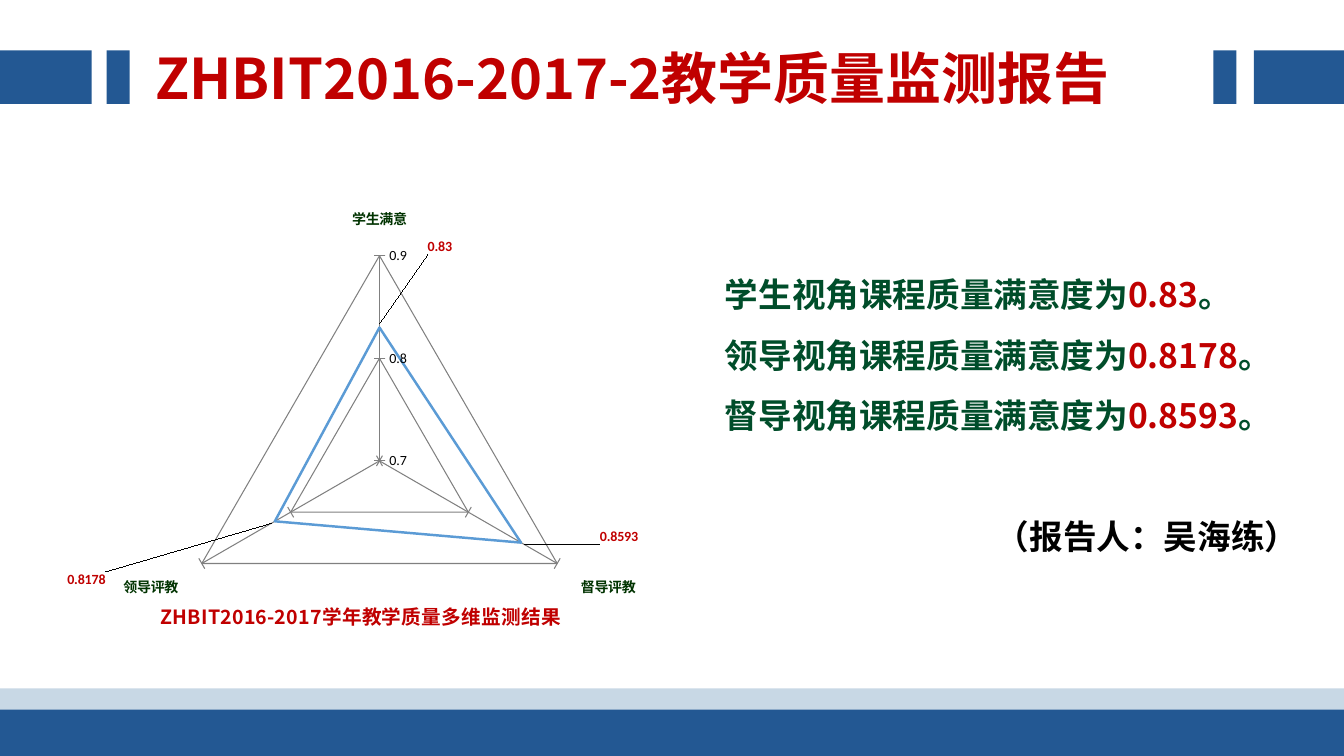
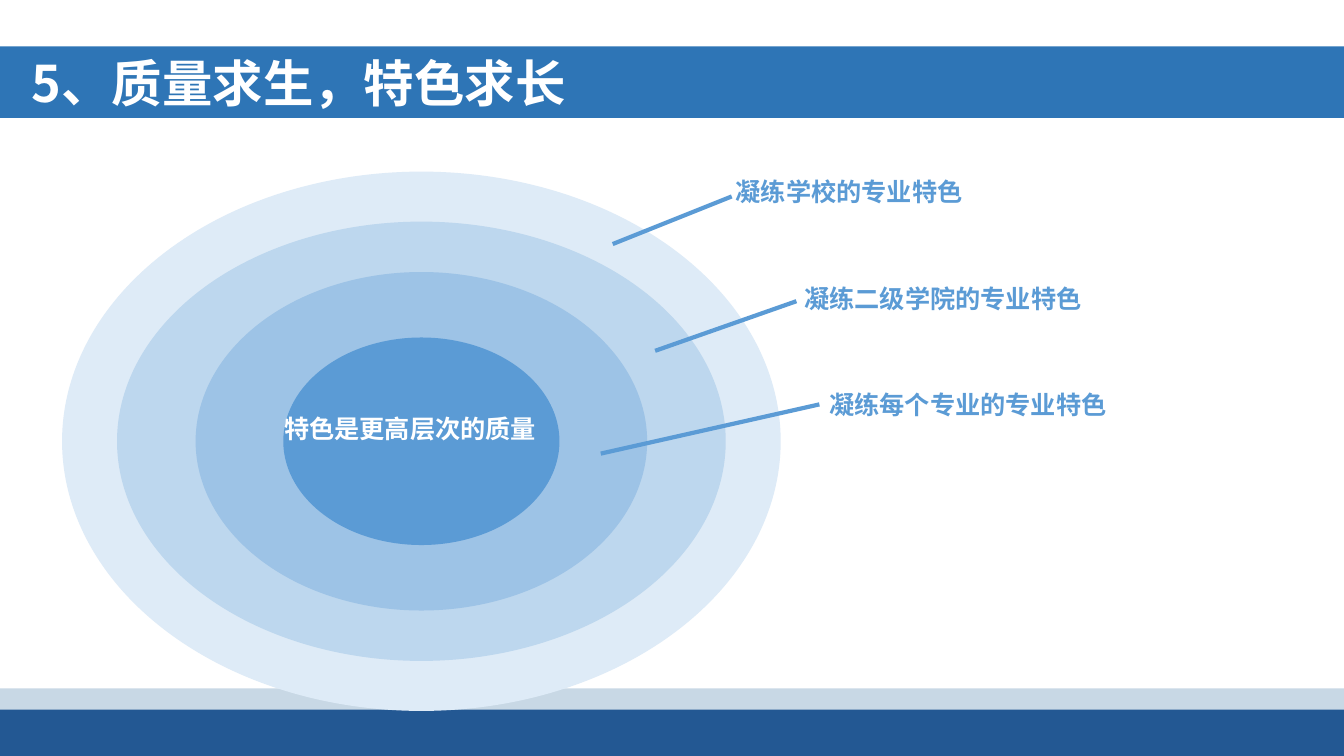
"""Build two slides on teaching quality with a radar chart and nested rings."""
from pptx import Presentation
from pptx.chart.data import CategoryChartData as Data
from pptx.dml.color import RGBColor
from pptx.enum.chart import XL_CHART_TYPE as Kind
from pptx.enum.shapes import MSO_CONNECTOR as Link, MSO_SHAPE as Form
from pptx.enum.text import MSO_ANCHOR as Anchor, MSO_AUTO_SIZE as Auto, PP_ALIGN as Align
from pptx.oxml import parse_xml
from pptx.oxml.ns import nsdecls, qn
from pptx.oxml.xmlchemy import OxmlElement as Node
from pptx.util import Cm, Pt

RED, GREEN, DARK, BLACK, WHITE = "C00000", "004D2A", "003300", "000000", "FFFFFF"
NAVY, PALE, BLUE, BAND, GREY = "235893", "C8D8E5", "5B9BD5", "2E75B6", "808080"
CJK = "Noto Sans CJK SC"


def paint(item, hue):
    """Give a font, fill or line a solid colour."""
    if hasattr(item, "solid"):
        item.solid()
        item.fore_color.rgb = RGBColor.from_string(hue)
    else:
        item.color.rgb = RGBColor.from_string(hue)


def style(font, size, hue, bold=True, name=CJK):
    """Set the size, weight, face and colour of a font."""
    for key, val in {"size": Pt(size), "bold": bold, "name": name}.items():
        setattr(font, key, val)
    paint(font, hue)
    east = Node("a:ea")
    east.set("typeface", name)
    font._element.find(qn("a:latin")).addnext(east)


deck = Presentation()
deck.slide_width, deck.slide_height = Cm(33.87), Cm(19.05)
report = deck.slides.add_slide(deck.slide_layouts[1])
traits = deck.slides.add_slide(deck.slide_layouts[5])

bars = [
    (0, 17.35, 33.87, 1.4, PALE),
    (0, 17.88, 33.87, 1.17, NAVY),
    (0, 1.27, 2.31, 1.35, NAVY),
    (2.69, 1.27, 0.58, 1.35, NAVY),
    (30.58, 1.27, 0.58, 1.35, NAVY),
    (31.6, 1.27, 2.27, 1.35, NAVY),
]
tree = deck.slide_master.shapes._spTree
for i, (*box, hue) in enumerate(bars):
    bar = report.shapes.add_shape(Form.RECTANGLE, *map(Cm, box))
    bar.shadow.inherit = False
    paint(bar.fill, hue)
    bar.line.fill.background()
    bar._element.nvSpPr.cNvPr.id = 20 + i
    tree.insert(2 + i, bar._element)

heads = [
    (report, "ZHBIT2016-2017-2教学质量监测报告", (3.66, 0.97, 29.29, 1.96), 0.25, 40, RED),
    (traits, "5、质量求生，特色求长", (0, 1.17, 33.87, 1.8), 0.8, 36, WHITE),
]
for page, text, box, inset, size, hue in heads:
    head = page.shapes.title
    head.left, head.top, head.width, head.height = map(Cm, box)
    frame = head.text_frame
    frame.text = text
    look = {"margin_left": Cm(inset), "auto_size": Auto.NONE, "vertical_anchor": Anchor.MIDDLE}
    for key, val in look.items():
        setattr(frame, key, val)
    frame.paragraphs[0].alignment = Align.LEFT
    style(frame.paragraphs[0].runs[0].font, size, hue)
paint(traits.shapes.title.fill, BAND)

body = report.placeholders[1]
body.left, body.top, body.width, body.height = map(Cm, (17.27, 6.27, 15.7, 7.9))
frame = body.text_frame
frame.auto_size, frame.margin_left = Auto.NONE, Cm(1)
rows = [
    [(f"{who}视角课程质量满意度为", GREEN), (score, RED), ("。", GREEN)]
    for who, score in (("学生", "0.83"), ("领导", "0.8178"), ("督导", "0.8593"))
]
rows.append([("（报告人：吴海练）", BLACK)])
for i, row in enumerate(rows):
    para = frame.add_paragraph() if i else frame.paragraphs[0]
    last = i == len(rows) - 1
    props = para._p.get_or_add_pPr()
    props.set("marL", "0")
    props.set("indent", "0")
    props.append(Node("a:buNone"))
    look = {
        "line_spacing": Pt(43.2),
        "space_before": Pt(43.2 if last else 0),
        "alignment": Align.RIGHT if last else Align.LEFT,
    }
    for key, val in look.items():
        setattr(para, key, val)
    for text, hue in row:
        run = para.add_run()
        run.text = text
        style(run.font, 24, hue)

data = Data()
data.categories = ["学生满意", "督导评教", "领导评教"]
data.add_series("Series 1", (0.83, 0.8593, 0.8178))
place = map(Cm, (-0.03, 3.45, 19, 13.61))
chart = report.shapes.add_chart(Kind.RADAR, *place, data).chart
chart.has_legend = False
style(chart.font, 10, BLACK, False, "Calibri")
chart.has_title = True
title = chart.chart_title
title.text_frame.text = "ZHBIT2016-2017学年教学质量多维监测结果"
style(title.text_frame.paragraphs[0].runs[0].font, 14, RED)

spokes, scale = chart.category_axis, chart.value_axis
style(spokes.tick_labels.font, 10, DARK)
style(scale.tick_labels.font, 10, BLACK, False, "Calibri")
look = {"minimum_scale": 0.7, "maximum_scale": 0.9, "major_unit": 0.1}
for key, val in look.items():
    setattr(scale, key, val)
scale.tick_labels.number_format = "0.0"
scale.tick_labels.number_format_is_linked = False
for axis in (spokes, scale):
    for part in (axis, axis.major_gridlines):
        paint(part.format.line, GREY)
        part.format.line.width = Pt(0.75)

ring = chart.plots[0].series[0]
ring.smooth = False
paint(ring.format.line, BLUE)
ring.format.line.width = Pt(1.75)

spots = [
    (title._element, {"xMode": "edge", "yMode": "edge", "x": 0.21, "y": 0.85}),
    (chart._chartSpace.chart.plotArea, {
        "layoutTarget": "inner", "xMode": "edge", "yMode": "edge",
        "x": 0.23, "y": 0.22, "w": 0.55, "h": 0.76}),
]
for i, (x, y) in enumerate([(0.08, -0.12), (0.1, -0.03), (-0.22, 0.09)]):
    label = ring.points[i].data_label
    style(label.font, 10, RED, True, "Calibri")
    spots.append((ring._element.findall(".//" + qn("c:dLbl"))[i], {"x": x, "y": y}))
for owner, vals in spots:
    old = owner.find(qn("c:layout"))
    if old is not None:
        owner.remove(old)
    inner = "".join(f'<c:{key} val="{val}"/>' for key, val in vals.items())
    spot = parse_xml(
        f'<c:layout {nsdecls("c")}><c:manualLayout>{inner}</c:manualLayout></c:layout>')
    lead = [kid for kid in owner if kid.tag in (qn("c:idx"), qn("c:tx"))]
    owner.insert(len(lead), spot)

mid_x, mid_y = 10.62, 11.12
rings = [
    (18.11, 13.59, "DEEBF7"),
    (15.34, 11.07, "BDD7EE"),
    (11.38, 8.53, "9DC3E6"),
    (6.96, 5.23, BLUE),
]
for wide, high, hue in rings:
    box = (mid_x - wide / 2, mid_y - high / 2, wide, high)
    oval = traits.shapes.add_shape(Form.OVAL, *map(Cm, box))
    oval.shadow.inherit = False
    paint(oval.fill, hue)
    oval.line.fill.background()

notes = [
    ("特色是更高层次的质量", 6.91, 10.29, WHITE),
    ("凝练学校的专业特色", 18.29, 4.32, BLUE),
    ("凝练二级学院的专业特色", 20.02, 7.01, BLUE),
    ("凝练每个专业的专业特色", 20.65, 9.68, BLUE),
]
for text, left, top, hue in notes:
    frame = traits.shapes.add_textbox(*map(Cm, (left, top, 8, 1.02))).text_frame
    frame.text = text
    for key, val in {"word_wrap": True, "vertical_anchor": Anchor.MIDDLE}.items():
        setattr(frame, key, val)
    style(frame.paragraphs[0].runs[0].font, 18, hue)

leads = [
    (15.44, 6.15, 18.44, 4.95),
    (16.51, 8.84, 20.07, 7.59),
    (15.14, 11.43, 20.65, 10.19),
]
for ends in leads:
    lead = traits.shapes.add_connector(Link.STRAIGHT, *map(Cm, ends))
    paint(lead.line, BLUE)
    lead.line.width = Pt(3)
    lead._element.spPr.append(Node("a:effectLst"))

deck.save("out.pptx")
